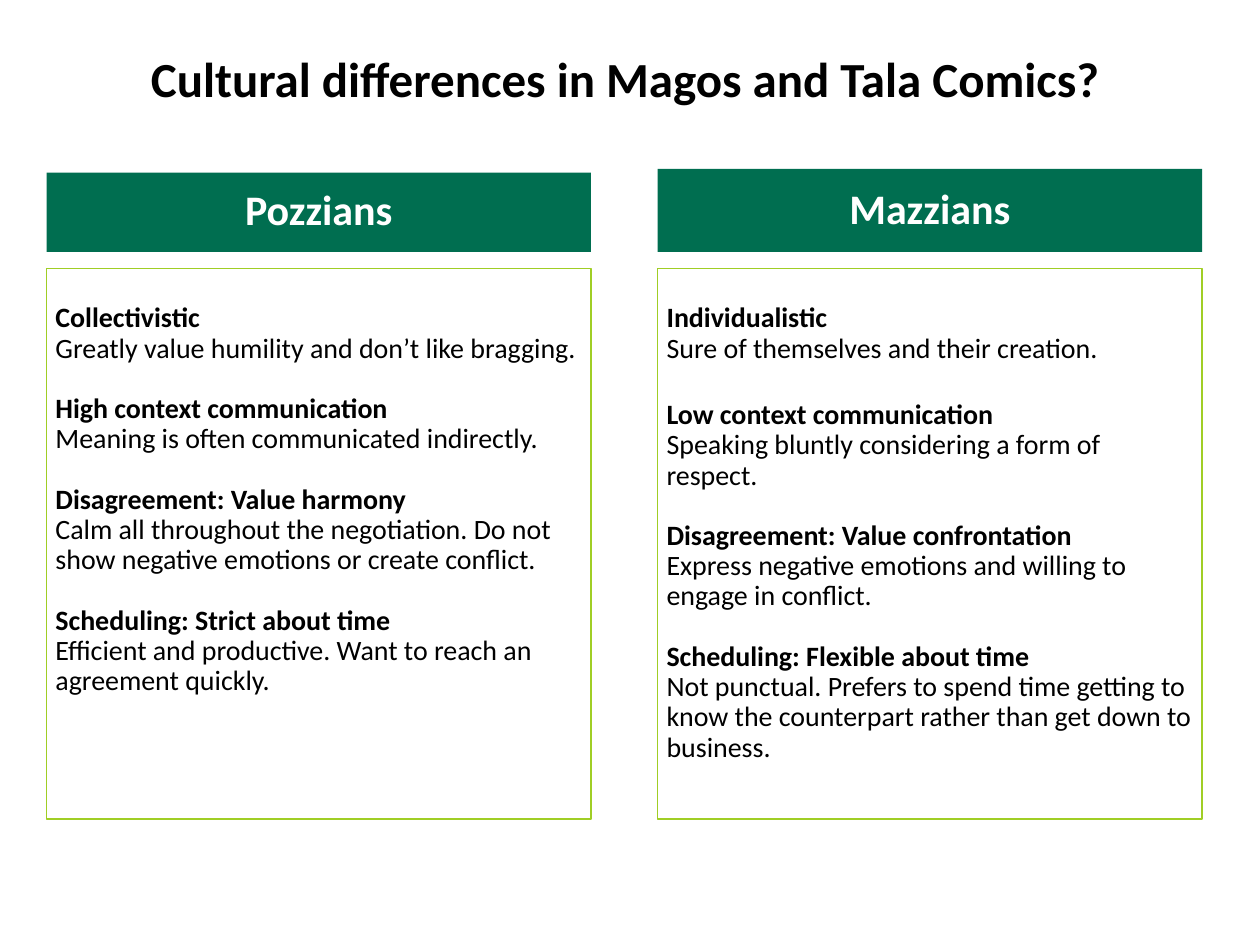
from pptx import Presentation
from pptx.dml.color import RGBColor
from pptx.enum.text import MSO_ANCHOR, MSO_AUTO_SIZE, PP_ALIGN
from pptx.oxml.ns import qn
from pptx.util import Inches, Pt

BLACK = RGBColor(0x00, 0x00, 0x00)
WHITE = RGBColor(0xFF, 0xFF, 0xFF)
GREEN = RGBColor(0x00, 0x6E, 0x50)
LIME = RGBColor(0xA0, 0xCE, 0x25)

MARGIN, COLUMN_WIDTH, COLUMN_STEP = 0.37, 4.32, 4.85
HEADER_BOTTOM, BODY_TOP, BODY_HEIGHT = 2, 2.13, 4.37
BLANK_LINE = 17.3

FRAME = dict(word_wrap=True, auto_size=MSO_AUTO_SIZE.NONE,
             margin_left=Inches(0.07), margin_right=Inches(0.07),
             margin_top=Inches(0.04), margin_bottom=Inches(0.04))
CENTERED = dict(alignment=PP_ALIGN.CENTER, line_spacing=0.9, space_before=Pt(0))
LEFT = dict(CENTERED, alignment=PP_ALIGN.LEFT)

COLUMNS = [
    ("Pozzians", 0.63, [
        ("Collectivistic", "Greatly value humility and don’t like bragging.", 0),
        ("High context communication", "Meaning is often communicated indirectly.", BLANK_LINE),
        ("Disagreement: Value harmony",
         "Calm all throughout the negotiation. Do not show negative emotions or create conflict.",
         BLANK_LINE),
        ("Scheduling: Strict about time",
         "Efficient and productive. Want to reach an agreement quickly.", BLANK_LINE),
    ]),
    ("Mazzians", 0.66, [
        ("Individualistic", "Sure of themselves and their creation.", 0),
        ("Low context communication",
         "Speaking bluntly considering a form of respect.", BLANK_LINE + 3.5),
        ("Disagreement: Value confrontation",
         "Express negative emotions and willing to engage in conflict.", BLANK_LINE),
        ("Scheduling: Flexible about time",
         "Not punctual. Prefers to spend time getting to know the counterpart "
         "rather than get down to business.", BLANK_LINE),
    ]),
]


def place(holder, left, top, width, height, **frame_format):
    box = dict(left=left, top=top, width=width, height=height)
    for name, inches in box.items():
        setattr(holder, name, Inches(inches))
    for name, value in {**FRAME, **frame_format}.items():
        setattr(holder.text_frame, name, value)


def write(paragraph, text, size, color, bold, paragraph_format):
    run = paragraph.add_run()
    run.text = text
    for name, value in dict(name="Calibri", size=Pt(size), bold=bold).items():
        setattr(run.font, name, value)
    run.font.color.rgb = color
    for name, value in paragraph_format.items():
        setattr(paragraph, name, value)
    properties = paragraph._p.get_or_add_pPr()
    properties.set("marL", "0")
    properties.set("indent", "0")
    properties.append(properties.makeelement(qn("a:buNone"), {}))


prs = Presentation()
prs.slide_width, prs.slide_height = Inches(10), Inches(7.5)
slide = prs.slides.add_slide(prs.slide_layouts.get_by_name("Comparison"))
title, *column_holders = slide.placeholders

place(title, MARGIN, -0.01, 9.18, 1.25, vertical_anchor=MSO_ANCHOR.MIDDLE)
write(title.text_frame.paragraphs[0], "Cultural differences in Magos and Tala Comics?",
      28, BLACK, True, dict(CENTERED, line_spacing=1.0))

for column, (culture, header_height, traits) in enumerate(COLUMNS):
    header, body = column_holders[2 * column:2 * column + 2]
    left = MARGIN + column * COLUMN_STEP

    place(body, left, BODY_TOP, COLUMN_WIDTH, BODY_HEIGHT,
          vertical_anchor=MSO_ANCHOR.TOP, margin_top=Inches(0.28))
    body.line.color.rgb = LIME
    body.line.width = Pt(0.75)
    for index, (trait, detail, gap) in enumerate(traits):
        frame = body.text_frame
        heading = frame.add_paragraph() if index else frame.paragraphs[0]
        write(heading, trait, 16, BLACK, True, dict(LEFT, space_before=Pt(gap)))
        write(frame.add_paragraph(), detail, 16, BLACK, False, LEFT)

    place(header, left, HEADER_BOTTOM - header_height, COLUMN_WIDTH, header_height,
          vertical_anchor=MSO_ANCHOR.MIDDLE)
    header.fill.solid()
    header.fill.fore_color.rgb = GREEN
    write(header.text_frame.paragraphs[0], culture, 24, WHITE, True, CENTERED)

prs.save("out.pptx")
